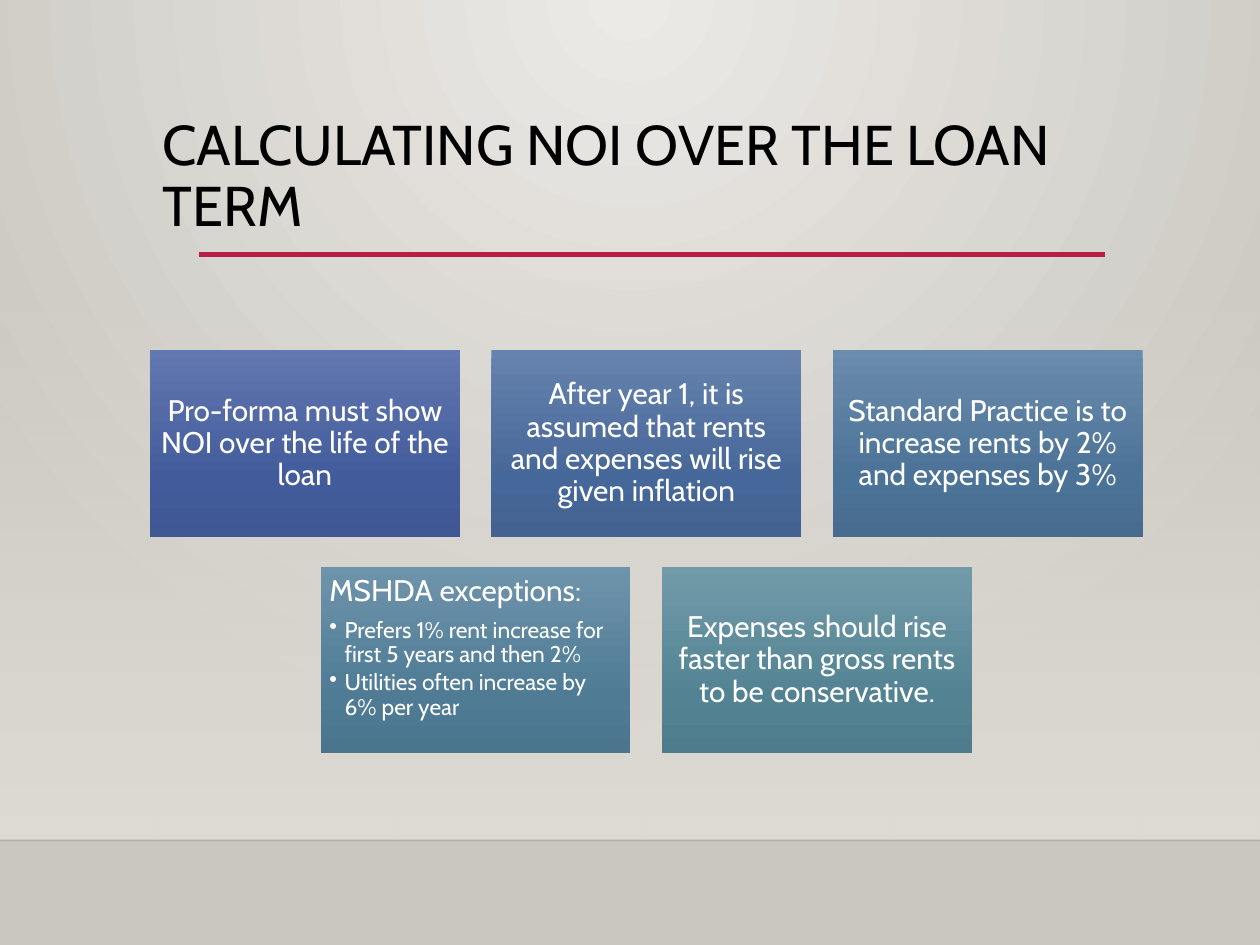
from dataclasses import dataclass

import lxml.etree
import pptx
import pptx.dml.color
import pptx.enum.shapes
import pptx.enum.text
import pptx.oxml
import pptx.oxml.ns
import pptx.util

RGB = pptx.dml.color.RGBColor
ALIGN = pptx.enum.text.PP_ALIGN
ANCHOR = pptx.enum.text.MSO_ANCHOR
RECT = pptx.enum.shapes.MSO_SHAPE.RECTANGLE
inch = pptx.util.Inches
qn = pptx.oxml.ns.qn

FONT = "Cabin"
BLACK = RGB(0x00, 0x00, 0x00)
INK = RGB(0x00, 0x00, 0x01)
WHITE = RGB(0xFF, 0xFF, 0xFF)
RED = RGB(0xB7, 0x1E, 0x42)
LIGHT = RGB(0xEC, 0xEA, 0xE7)
STONE = RGB(0xCA, 0xC7, 0xC1)
SAND = RGB(0xDF, 0xDB, 0xD5)
INDIGO = (RGB(0x63, 0x78, 0xB0), RGB(0x42, 0x5B, 0x9B), RGB(0x3F, 0x57, 0x93))
BLUE = (RGB(0x67, 0x83, 0xAE), RGB(0x46, 0x67, 0x99), RGB(0x43, 0x62, 0x91))
AZURE = (RGB(0x6A, 0x8C, 0xAD), RGB(0x4B, 0x72, 0x97), RGB(0x47, 0x6C, 0x8F))
STEEL = (RGB(0x6E, 0x94, 0xAB), RGB(0x4F, 0x7B, 0x95), RGB(0x4B, 0x75, 0x8D))
TEAL = (RGB(0x72, 0x9B, 0xA9), RGB(0x53, 0x83, 0x93), RGB(0x4F, 0x7C, 0x8B))

WIDE, HIGH = 10, 7.5
LEFT, TOP = 1.19, 2.78
CARD_W, CARD_H = 2.46, 1.48
STEP_X, STEP_Y = 2.71, 1.72
FLOOR = 6.67
DOWN = '<a:lin ang="5400000" scaled="0"/>'
GLOW = ('<a:path path="circle"><a:fillToRect l="43000" t="0" '
        'r="43000" b="100000"/></a:path>')


@dataclass
class Stop:
    place: int
    color: RGB
    alpha: int = 100


@dataclass
class Card:
    col: float
    row: int
    tones: tuple
    head: str
    points: tuple = ()


CARDS = [
    Card(0, 0, INDIGO, "Pro-forma must show NOI over the life of the loan"),
    Card(1, 0, BLUE, "After year 1, it is assumed that rents and expenses "
         "will rise given inflation"),
    Card(2, 0, AZURE, "Standard Practice is to increase rents by 2% "
         "and expenses by 3%"),
    Card(0.5, 1, STEEL, "MSHDA exceptions:",
         ("Prefers 1% rent increase for first 5 years and then 2%",
          "Utilities often increase by 6% per year")),
    Card(1.5, 1, TEAL, "Expenses should rise faster than gross rents "
         "to be conservative."),
]


def blend(fill, owner, stops: list[Stop], flow: str = DOWN) -> None:
    fill.gradient()
    old = next(owner.iter(qn("a:gradFill")))
    marks = "".join(
        f'<a:gs pos="{s.place * 1000}"><a:srgbClr val="{s.color}">'
        f'<a:alpha val="{s.alpha * 1000}"/></a:srgbClr></a:gs>'
        for s in stops)
    new = pptx.oxml.parse_xml(
        f'<a:gradFill {pptx.oxml.ns.nsdecls("a")} rotWithShape="1">'
        f'<a:gsLst>{marks}</a:gsLst>{flow}</a:gradFill>')
    old.getparent().replace(old, new)


def block(slide, x: float, y: float, w: float, h: float, stops: list[Stop]):
    shape = slide.shapes.add_shape(RECT, inch(x), inch(y), inch(w), inch(h))
    shape.shadow.inherit = False
    shape.line.fill.background()
    blend(shape.fill, shape.element.spPr, stops)
    return shape


def rule(slide, x: float, y: float, end: float, color: RGB,
         width: float, alpha: int = 100) -> None:
    line = slide.shapes.add_connector(
        pptx.enum.shapes.MSO_CONNECTOR.STRAIGHT,
        inch(x), inch(y), inch(end), inch(y))
    line.line.color.rgb = color
    line.line.width = pptx.util.Pt(width)
    props = line.element.spPr
    tint = next(props.iter(qn("a:srgbClr")))
    lxml.etree.SubElement(tint, qn("a:alpha")).set("val", str(alpha * 1000))
    lxml.etree.SubElement(props, qn("a:effectLst"))


def style(para, size: int, color: RGB, align=ALIGN.LEFT, after: int = 0) -> None:
    para.alignment = align
    para.line_spacing = 0.9
    para.space_after = pptx.util.Pt(after)
    for run in para.runs:
        run.font.name = FONT
        run.font.size = pptx.util.Pt(size)
        run.font.color.rgb = color


def bullet(para) -> None:
    props = para._p.get_or_add_pPr()
    props.set("marL", str(inch(0.12)))
    props.set("indent", str(-inch(0.12)))
    lxml.etree.SubElement(props, qn("a:buChar")).set("char", "•")


def title(slide, text: str) -> None:
    box = slide.shapes.add_textbox(inch(LEFT), inch(0.88), inch(7.88), inch(1.15))
    frame = box.text_frame
    frame.word_wrap = True
    frame.text = text
    style(frame.paragraphs[0], 32, BLACK)


def draw(slide, card: Card) -> None:
    stops = [Stop(p, c) for p, c in zip((0, 69, 100), card.tones)]
    shape = block(slide, LEFT + card.col * STEP_X, TOP + card.row * STEP_Y,
                  CARD_W, CARD_H, stops)
    frame = shape.text_frame
    frame.word_wrap = True
    frame.margin_left = frame.margin_right = inch(0.07)
    frame.margin_top = frame.margin_bottom = inch(0.07)
    frame.vertical_anchor = ANCHOR.TOP if card.points else ANCHOR.MIDDLE
    frame.text = card.head
    if card.points:
        style(frame.paragraphs[0], 17, WHITE, after=6)
    else:
        style(frame.paragraphs[0], 17, WHITE, ALIGN.CENTER)
    for point in card.points:
        para = frame.add_paragraph()
        para.text = point
        para.level = 1
        bullet(para)
        style(para, 13, WHITE, after=2)


def main() -> None:
    deck = pptx.Presentation()
    deck.slide_width, deck.slide_height = inch(WIDE), inch(HIGH)
    slide = deck.slides.add_slide(deck.slide_layouts[6])
    blend(slide.background.fill, slide.element,
          [Stop(0, LIGHT), Stop(100, STONE)], GLOW)
    block(slide, 0, 2.2, WIDE, FLOOR - 2.2, [Stop(0, SAND, 0), Stop(100, SAND)])
    rule(slide, 0, FLOOR, WIDE, INK, 1, 20)
    rule(slide, 1.58, 2.02, 8.77, RED, 2.5)
    title(slide, "CALCULATING NOI OVER THE LOAN TERM")
    for card in CARDS:
        draw(slide, card)
    deck.save("out.pptx")


if __name__ == "__main__":
    main()
